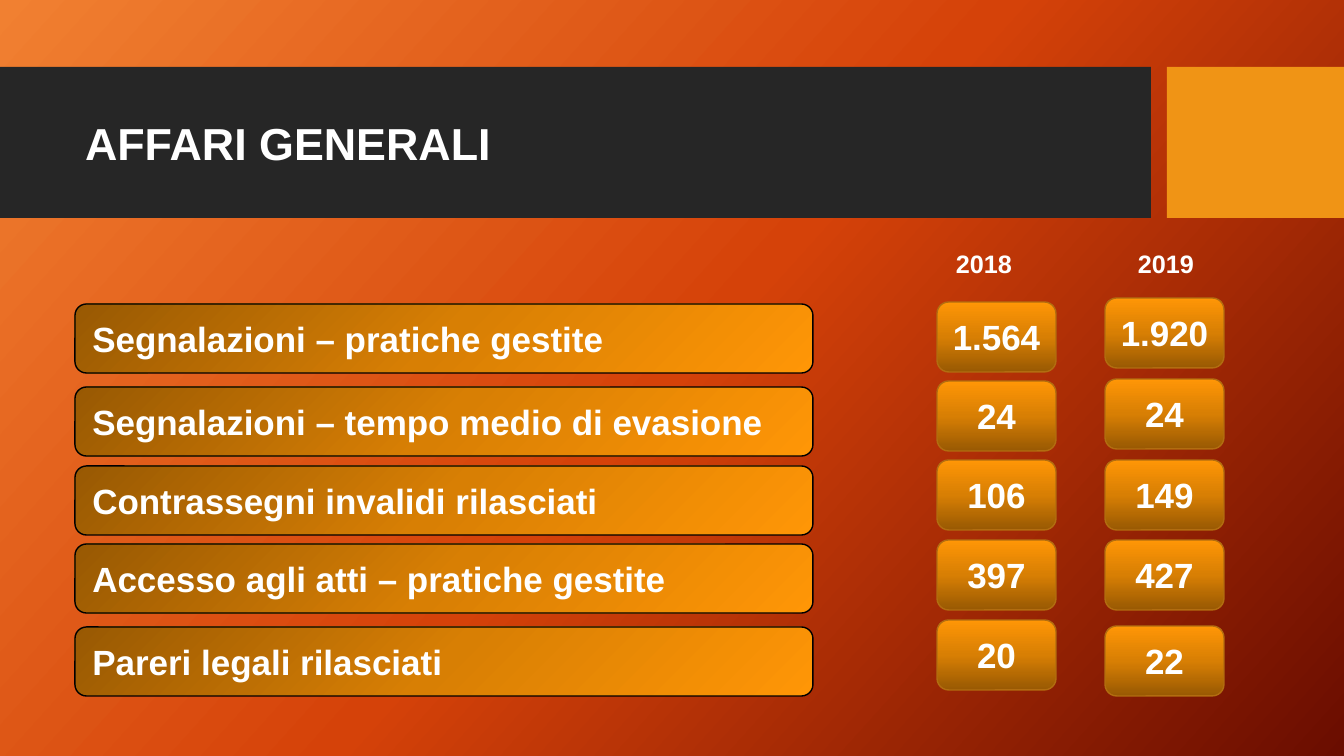
import dataclasses

import lxml.etree
import pptx
import pptx.dml.color
import pptx.enum.shapes
import pptx.enum.text
import pptx.oxml.ns
import pptx.util

PX = 12192000 / 1344
SHAPES = pptx.enum.shapes.MSO_SHAPE
ALIGN = pptx.enum.text.PP_ALIGN
qn = pptx.oxml.ns.qn


def px(length):
    return pptx.util.Emu(round(length * PX))


def rgb(value):
    return pptx.dml.color.RGBColor.from_string(value)


@dataclasses.dataclass(frozen=True)
class Theme:
    font: str = "Arial"
    text: str = "FFFFFF"
    banner: str = "262626"
    accent: str = "F09415"
    label_line: str = "000000"
    value_line: str = "B26D10"
    background: tuple = ("F18031", "D54209", "6A0D00")
    amber: tuple = ("985903", "D87F04", "FF9606")
    title_size: int = 32
    body_size: int = 25
    year_size: int = 18


class SlideBuilder:
    def __init__(self, slide, theme):
        self.slide = slide
        self.theme = theme

    def gradient(self, fill, owner, colors, angle=None):
        """Spread colors evenly, along an angle or radially from the top left."""
        fill.gradient()
        gradient = owner.find(".//" + qn("a:gradFill"))
        stops = gradient.find(qn("a:gsLst"))
        for stop in list(stops):
            stops.remove(stop)
        for index, color in enumerate(colors):
            position = 100000 * index // (len(colors) - 1)
            stop = lxml.etree.SubElement(stops, qn("a:gs"), pos=str(position))
            lxml.etree.SubElement(stop, qn("a:srgbClr"), val=color)
        linear = gradient.find(qn("a:lin"))
        if angle is not None:
            linear.set("ang", str(angle * 60000))
            linear.set("scaled", "0")
            return
        radial = lxml.etree.Element(qn("a:path"), {"path": "circle"})
        lxml.etree.SubElement(radial, qn("a:fillToRect"), r="100000", b="100000")
        gradient.replace(linear, radial)

    def background(self):
        self.gradient(self.slide.background.fill, self.slide.element,
                      self.theme.background, angle=42)

    def fill_text(self, shape, text, size, align=ALIGN.LEFT, margin=10):
        frame = shape.text_frame
        frame_format = {
            "word_wrap": True,
            "vertical_anchor": pptx.enum.text.MSO_ANCHOR.MIDDLE,
            "margin_left": px(margin),
            "margin_right": px(margin),
        }
        for name, value in frame_format.items():
            setattr(frame, name, value)
        paragraph = frame.paragraphs[0]
        paragraph.text = text
        paragraph.alignment = align
        font_format = {"name": self.theme.font, "size": pptx.util.Pt(size), "bold": True}
        for name, value in font_format.items():
            setattr(paragraph.font, name, value)
        paragraph.font.color.rgb = rgb(self.theme.text)

    def text(self, box, text, size, align=ALIGN.LEFT):
        shape = self.slide.shapes.add_textbox(*map(px, box))
        self.fill_text(shape, text, size, align)

    def shape(self, kind, box):
        shape = self.slide.shapes.add_shape(kind, *map(px, box))
        shape.shadow.inherit = False
        return shape

    def block(self, box, color):
        shape = self.shape(SHAPES.RECTANGLE, box)
        shape.fill.solid()
        shape.fill.fore_color.rgb = rgb(color)
        shape.line.fill.background()

    def pill(self, box, text, line, angle=None, **text_format):
        shape = self.shape(SHAPES.ROUNDED_RECTANGLE, box)
        self.gradient(shape.fill, shape.element, self.theme.amber, angle)
        shape.line.color.rgb = rgb(line)
        shape.line.width = pptx.util.Pt(1)
        self.fill_text(shape, text, self.theme.body_size, **text_format)

    def label(self, top, text):
        self.pill((75, top, 738, 69), text, self.theme.label_line, margin=14)

    def value(self, left, top, text):
        self.pill((left, top, 119, 70), text, self.theme.value_line,
                  angle=270, align=ALIGN.CENTER)


LABELS = [
    (304, "Segnalazioni – pratiche gestite"),
    (387, "Segnalazioni – tempo medio di evasione"),
    (466, "Contrassegni invalidi rilasciati"),
    (544, "Accesso agli atti – pratiche gestite"),
    (627, "Pareri legali rilasciati"),
]
# Year, left of the year heading, left of the values, (top, value) pairs
YEARS = [
    ("2018", 944, 937,
     [(302, "1.564"), (381, "24"), (460, "106"), (540, "397"), (620, "20")]),
    ("2019", 1126, 1105,
     [(298, "1.920"), (379, "24"), (460, "149"), (540, "427"), (626, "22")]),
]


def main():
    presentation = pptx.Presentation()
    presentation.slide_width = px(1344)
    presentation.slide_height = px(756)
    slide = presentation.slides.add_slide(presentation.slide_layouts[6])
    theme = Theme()
    builder = SlideBuilder(slide, theme)

    builder.background()
    builder.block((0, 67, 1151, 151), theme.banner)
    builder.block((1167, 67, 177, 151), theme.accent)
    builder.text((75, 83, 1059, 119), "AFFARI GENERALI", theme.title_size)

    for top, text in LABELS:
        builder.label(top, text)
    for year, heading_left, values_left, values in YEARS:
        builder.text((heading_left, 243, 80, 40), year, theme.year_size, ALIGN.CENTER)
        for top, text in values:
            builder.value(values_left, top, text)

    presentation.save("out.pptx")


if __name__ == "__main__":
    main()
